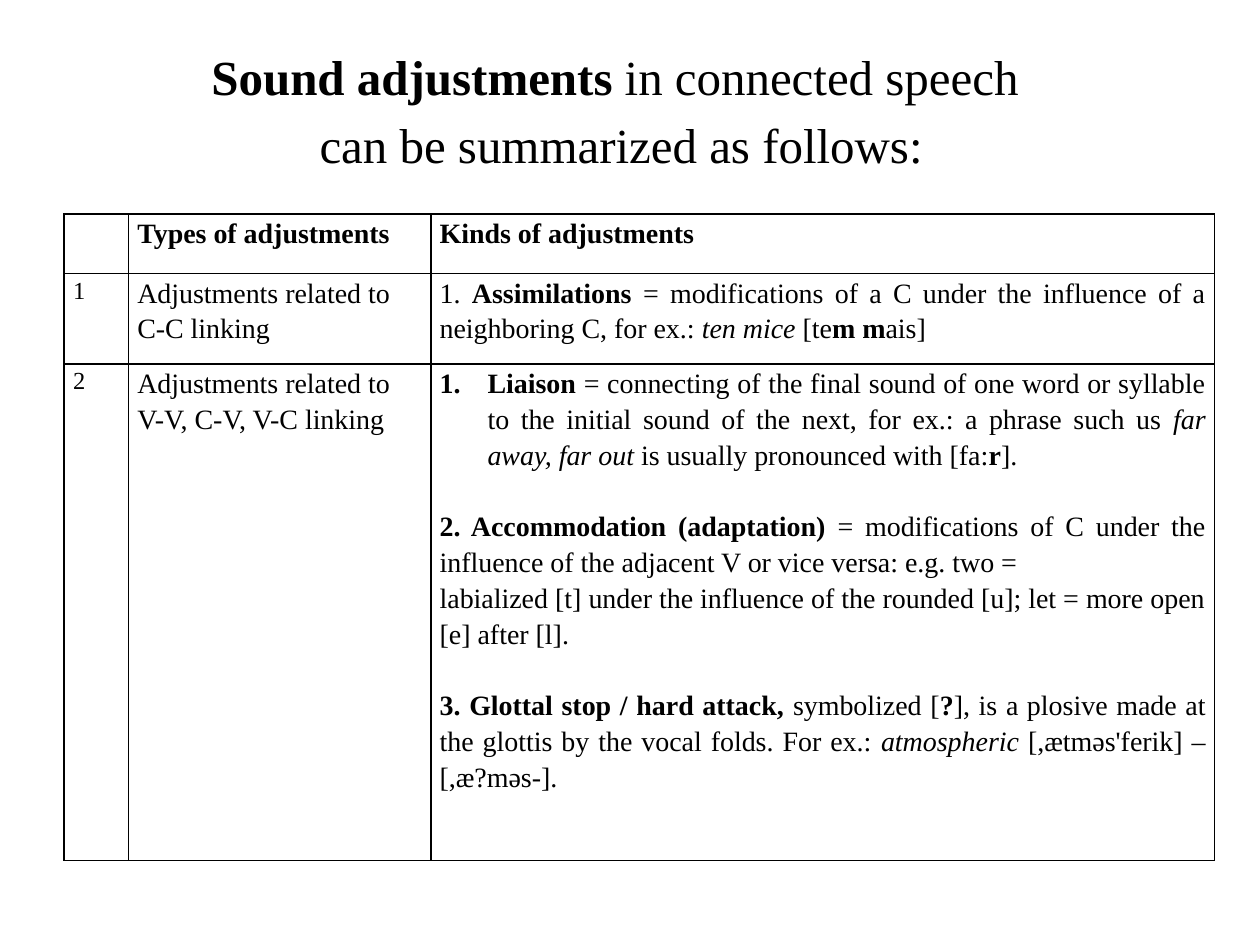
from lxml import etree
from pptx import Presentation
from pptx.dml.color import RGBColor
from pptx.enum.text import MSO_ANCHOR, PP_ALIGN
from pptx.oxml.ns import qn
from pptx.util import Inches, Pt

CENTER = PP_ALIGN.CENTER
JUSTIFY = PP_ALIGN.JUSTIFY
MIDDLE = MSO_ANCHOR.MIDDLE
TOP = MSO_ANCHOR.TOP

FONT = "Times New Roman"
BLACK = "000000"
WHITE = "FFFFFF"
BODY_SIZE = 16
NUMBER_SIZE = 14
TITLE_SIZE = 28
SECTION_GAP = 20.5

COLUMN_WIDTHS = [0.51, 2.4, 6.22]
ROW_HEIGHTS = [0.47, 0.72, 3.94]

TITLE = [
    [("Sound adjustments ", "b"), ("in connected speech ", "")],
    [("can be summarized as follows:", "")],
]
ASSIMILATION = [
    ("1. ", ""), ("Assimilations", "b"),
    (" = modifications of a C under the influence of a neighboring C, for ex.: ", ""),
    ("ten mice ", "i"), ("[te", ""), ("m m", "b"), ("ais]", ""),
]
LIAISON = [
    ("Liaison ", "b"),
    ("= connecting of the final sound of one word or syllable to the initial "
     "sound of the next, for ex.: a phrase such us ", ""),
    ("far away, far out", "i"), (" is usually pronounced with [fa:", ""),
    ("r", "b"), ("].", ""),
]
ACCOMMODATION = [
    ("2. Accommodation (adaptation)", "b"),
    (" = modifications of C under the influence of the adjacent V or vice versa: "
     "e.g. two =", ""),
]
LABIALIZATION = [
    ("labialized [t] under the influence of the rounded [u]; let = more open [e] "
     "after [l].", ""),
]
GLOTTAL_STOP = [
    ("3. Glottal stop / hard attack, ", "b"), ("symbolized [", ""), ("?", "b"),
    ("], is a plosive made at the glottis by the vocal folds. For ex.: ", ""),
    ("atmospheric ", "i"), ("[,ætməs'ferik] – [,æ?mǝs-].", ""),
]
ROWS = [
    [[], [[("Types of adjustments", "b")]], [[("Kinds of adjustments", "b")]]],
    [[[("1", "")]],
     [[("Adjustments related to", "")], [("C-C linking", "")]],
     [ASSIMILATION]],
    [[[("2", "")]],
     [[("Adjustments related to", "")], [("V-V, C-V, V-C linking", "")]],
     [LIAISON, ACCOMMODATION, LABIALIZATION, GLOTTAL_STOP]],
]


def color(value):
    return RGBColor.from_string(value)


def write_paragraphs(text_frame, paragraphs, size, alignment):
    for index, runs in enumerate(paragraphs):
        paragraph = text_frame.paragraphs[0] if index == 0 else text_frame.add_paragraph()
        paragraph.alignment = alignment
        paragraph.line_spacing = 1.15
        for text, style in runs:
            run = paragraph.add_run()
            run.text = text
            run.font.name = FONT
            run.font.size = Pt(size)
            run.font.bold = style == "b"
            run.font.italic = style == "i"
            run.font.color.rgb = color(BLACK)


def add_title(slide):
    box = slide.shapes.add_textbox(Inches(0.43), Inches(0.21), Inches(9), Inches(1.25))
    text_frame = box.text_frame
    text_frame.word_wrap = True
    text_frame.vertical_anchor = MIDDLE
    write_paragraphs(text_frame, TITLE, TITLE_SIZE, CENTER)


def set_borders(cell):
    properties = cell._tc.get_or_add_tcPr()
    for position, side in enumerate(("lnL", "lnR", "lnT", "lnB")):
        line = etree.Element(qn(f"a:{side}"), w=str(Pt(1)))
        fill = etree.SubElement(line, qn("a:solidFill"))
        etree.SubElement(fill, qn("a:srgbClr"), val=BLACK)
        properties.insert(position, line)


def number_paragraph(paragraph):
    properties = paragraph._p.get_or_add_pPr()
    properties.set("marL", str(Inches(0.38)))
    properties.set("indent", str(Inches(-0.38)))
    etree.SubElement(properties, qn("a:buFont"), typeface="+mj-lt")
    etree.SubElement(properties, qn("a:buAutoNum"), type="arabicPeriod")


def fill_cell(cell, paragraphs, size):
    cell.fill.solid()
    cell.fill.fore_color.rgb = color(WHITE)
    cell.margin_left = cell.margin_right = Inches(0.07)
    cell.margin_top = cell.margin_bottom = 0
    cell.vertical_anchor = TOP
    write_paragraphs(cell.text_frame, paragraphs, size, JUSTIFY)
    set_borders(cell)


def add_adjustments_table(slide):
    frame = slide.shapes.add_table(
        len(ROW_HEIGHTS), len(COLUMN_WIDTHS), Inches(0.51), Inches(1.7),
        Inches(sum(COLUMN_WIDTHS)), Inches(sum(ROW_HEIGHTS)))
    table = frame.table
    for column, width in zip(table.columns, COLUMN_WIDTHS):
        column.width = Inches(width)
    for row, height, contents in zip(table.rows, ROW_HEIGHTS, ROWS):
        row.height = Inches(height)
        for index, (cell, paragraphs) in enumerate(zip(row.cells, contents)):
            fill_cell(cell, paragraphs, NUMBER_SIZE if index == 0 else BODY_SIZE)

    liaison, accommodation, _, glottal_stop = table.cell(2, 2).text_frame.paragraphs
    number_paragraph(liaison)
    for paragraph in (accommodation, glottal_stop):
        paragraph.space_before = Pt(SECTION_GAP)


def main():
    presentation = Presentation()
    presentation.slide_width = Inches(10)
    presentation.slide_height = Inches(7.5)
    slide = presentation.slides.add_slide(presentation.slide_layouts[6])
    add_title(slide)
    add_adjustments_table(slide)
    presentation.save("out.pptx")


if __name__ == "__main__":
    main()
